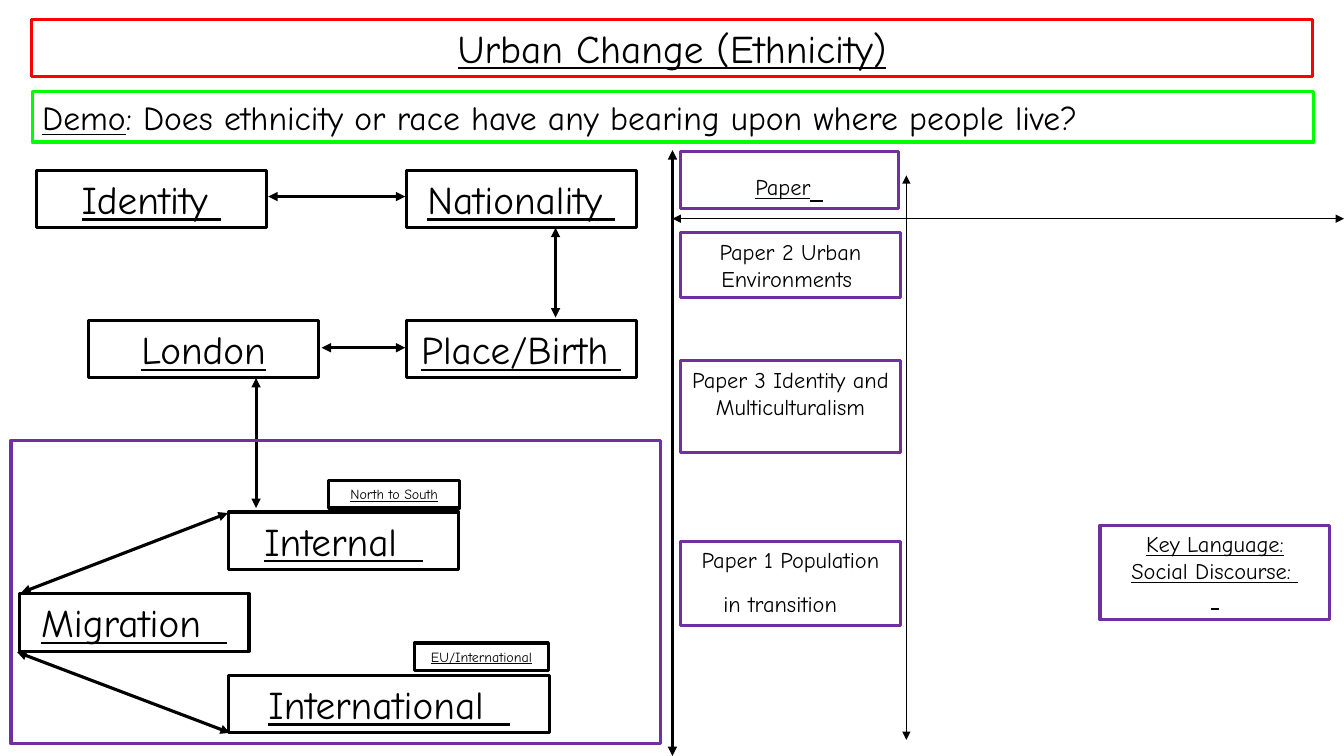
from lxml import etree
from pptx import Presentation
from pptx import util as u
from pptx.dml.color import RGBColor
from pptx.enum import shapes, text
from pptx.oxml import ns

FONT = "Comic Neue"
COLOURS = {"title": "FF0000", "demo": "00FF00", "panel": "7030A0", "ink": "000000"}
TERM_WIDTH, TERM_HEIGHT = 2.28, 0.57


def colour(name):
    return RGBColor.from_string(COLOURS[name])


def add_box(page, box, edge, paragraphs=(), align=text.PP_ALIGN.CENTER,
            anchor=text.MSO_ANCHOR.TOP):
    """Outlined box; each paragraph is a list of (wording, size, underlined)."""
    shape = page.shapes.add_shape(shapes.MSO_SHAPE.RECTANGLE, *map(u.Inches, box))
    shape.shadow.inherit = False
    shape.fill.background()
    shape.line.color.rgb = colour(edge)
    shape.line.width = u.Pt(2.25)
    frame = shape.text_frame
    frame.word_wrap = True
    frame.vertical_anchor = anchor
    if paragraphs:
        frame.auto_size = text.MSO_AUTO_SIZE.SHAPE_TO_FIT_TEXT
    for index, spans in enumerate(paragraphs):
        para = frame.add_paragraph() if index else frame.paragraphs[0]
        para.alignment = align
        for wording, size, underlined in spans:
            span = para.add_run()
            span.text = wording
            span.font.name = FONT
            span.font.size = u.Pt(size)
            span.font.underline = underlined
            span.font.color.rgb = colour("ink")


def add_arrow(page, start, end, width=2.25):
    """Line with a triangle at both ends."""
    arrow = page.shapes.add_connector(
        shapes.MSO_CONNECTOR.STRAIGHT, *map(u.Inches, (*start, *end)))
    arrow.line.color.rgb = colour("ink")
    arrow.line.width = u.Pt(width)
    line = arrow.line._get_or_add_ln()
    for end_name in ("a:headEnd", "a:tailEnd"):
        etree.SubElement(line, ns.qn(end_name), type="triangle")
    etree.SubElement(arrow._element.spPr, ns.qn("a:effectLst"))


def add_heading(page, left, top, width):
    # Title and question bars
    add_box(page, (left, top, width, 0.57), "title",
            [[("Urban Change (Ethnicity)", 28, True)]])
    question = ": Does ethnicity or race have any bearing upon where people live?"
    add_box(page, (left + 0.01, top + 0.72, width, 0.5), "demo",
            [[("Demo", 24, True), (question, 24, False)]], text.PP_ALIGN.LEFT)


def add_term(page, wording, left, top, width=TERM_WIDTH):
    add_box(page, (left, top, width, TERM_HEIGHT), "ink", [[(wording, 28, True)]])


def add_concept_map(page, left, top):
    # Linked terms in two rows
    right, lower = left + 3.67, top + 1.49
    add_term(page, "Identity ", left, top)
    add_term(page, "Nationality ", right, top)
    add_term(page, "Place/Birth ", right, lower)
    add_term(page, "London", left + 0.52, lower)

    # Links between the terms
    add_arrow(page, (right - 0.01, top + 0.26), (left + 2.3, top + 0.26))
    add_arrow(page, (right + 1.48, lower - 0.03), (right + 1.48, top + TERM_HEIGHT))
    add_arrow(page, (right - 0.01, lower + 0.27), (left + 2.83, lower + 0.27))
    add_arrow(page, (left + 2.18, top + 3.35), (left + 2.18, lower + TERM_HEIGHT))


def add_migration(page, left, top, width, height):
    # Migration and its two kinds
    kinds, internal, international = left + 2.16, top + 0.71, top + 2.33
    add_term(page, "Migration  ", left + 0.08, top + 1.52)
    add_term(page, "Internal  ", kinds, internal)
    add_term(page, "International  ", kinds, international, 3.18)

    # Small labels above each kind
    labels = [("North to South", left + 3.15, internal - 0.31, 1.3),
              ("EU/International", left + 4, international - 0.32, 1.33)]
    for wording, label_left, label_top, label_width in labels:
        add_box(page, (label_left, label_top, label_width, 0.27), "ink",
                [[(wording, 10, True)]])

    # Branches and frame
    add_arrow(page, (left + 0.1, top + 1.51), (kinds - 0.01, internal + 0.01))
    add_arrow(page, (left + 0.06, top + 2.1), (kinds + 0.01, international + 0.57))
    add_box(page, (left, top, width, height), "panel")


def add_papers(page, left, top, right, bottom):
    # Grid lines
    add_arrow(page, (left, top - 0.01), (left, bottom))
    add_arrow(page, (left, top + 0.67), (right, top + 0.67), 0.5)
    add_arrow(page, (left + 2.32, top + 0.24), (left + 2.32, bottom - 0.16), 0.5)

    # Column heading and papers
    column = left + 0.08
    add_box(page, (column, top, 2.16, 0.57), "panel",
            [[("Paper", 16, True), (" ", 28, True)]], anchor=text.MSO_ANCHOR.MIDDLE)
    papers = [
        (0.81, 0.64, [("Paper 2 Urban Environments ", 16, False)]),
        (2.08, 0.91, [("Paper 3 Identity and Multiculturalism", 16, False)]),
        (3.87, 0.84, [("Paper 1 Population in transition ", 16, False),
                      (" ", 28, False)]),
    ]
    for offset, height, spans in papers:
        add_box(page, (column, top + offset, 2.18, height), "panel", [spans])

    # Key language
    wordings = ("Key Language:", "Social Discourse: ", " ")
    add_box(page, (left + 4.24, top + 3.71, 2.28, 0.94), "panel",
            [[(wording, 16, True)] for wording in wordings])


def main():
    deck = Presentation()
    deck.slide_width, deck.slide_height = u.Inches(13.33), u.Inches(7.5)
    page = deck.slides.add_slide(deck.slide_layouts[6])
    add_heading(page, 0.31, 0.19, 12.71)
    add_concept_map(page, 0.36, 1.69)
    add_migration(page, 0.11, 4.37, 6.44, 3.01)
    add_papers(page, 6.67, 1.5, 13.33, 7.5)
    deck.save("out.pptx")


if __name__ == "__main__":
    main()
